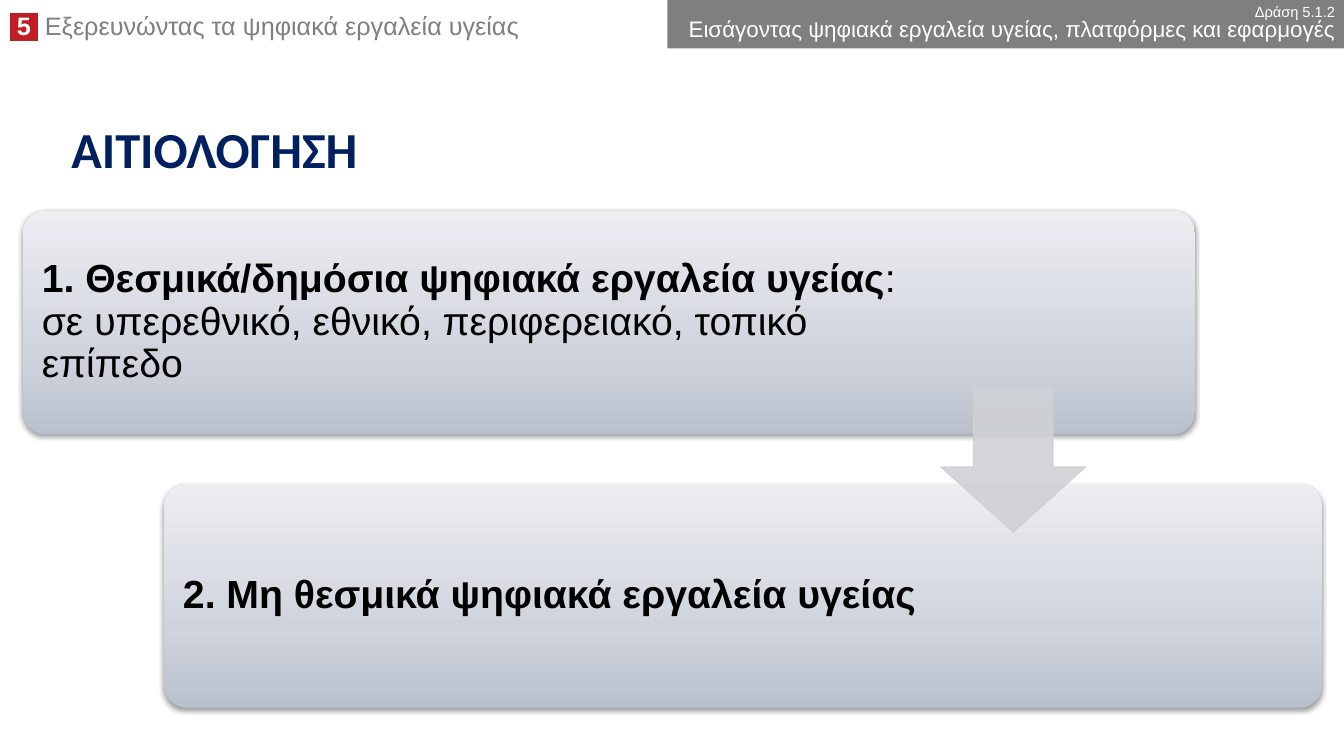
"""Builds the rationale slide: two cards of health tools joined by an arrow."""
from copy import deepcopy

from lxml import etree
from pptx import Presentation
from pptx.dml.color import RGBColor
from pptx.enum.shapes import MSO_SHAPE
from pptx.enum.text import MSO_ANCHOR, PP_ALIGN
from pptx.oxml.ns import qn
from pptx.util import Inches, Pt

RECT, ROUND, DOWN = MSO_SHAPE.RECTANGLE, MSO_SHAPE.ROUNDED_RECTANGLE, MSO_SHAPE.DOWN_ARROW
TOP, MIDDLE = MSO_ANCHOR.TOP, MSO_ANCHOR.MIDDLE
LEFT, RIGHT = PP_ALIGN.LEFT, PP_ALIGN.RIGHT

COLORS = {"white": "FFFFFF", "black": "000000", "gray": "7F7F7F", "red": "C01E24",
          "navy": "002060", "arrow": "CFD1D4"}
GRADE = [(0, "BAC1CE"), (35, "CFD3DC"), (100, "EDEEF2")]

# Each run: text, size, colour, bold
HEAD = [(" 5 ", 18, "white", True),
        (" Εξερευνώντας τα ψηφιακά εργαλεία υγείας", 18, "gray", False)]
BANNER = [("Δράση 5.1.2", 10.5, "white", False),
          ("Εισάγοντας ψηφιακά εργαλεία υγείας, πλατφόρμες και εφαρμογές", 16, "white", False)]
TITLE = [("ΑΙΤΙΟΛΟΓΗΣΗ", 36, "navy", True)]
CARDS = [
    ((0.23, 2.09, 11.62, 2.22), 9.1,
     [("1. Θεσμικά/δημόσια ψηφιακά εργαλεία υγείας", 28, "black", True),
      (": σε υπερεθνικό, εθνικό, περιφερειακό, τοπικό επίπεδο", 28, "black", False)]),
    ((1.63, 4.8, 11.48, 2.22), 7.75,
     [("2. Μη θεσμικά ψηφιακά εργαλεία υγείας", 28, "black", True)]),
]
ARROW = (9.33, 3.84, 1.44, 1.44)
PAD = 0.065


def rgb(name):
    return RGBColor.from_string(COLORS[name])


def node(parent, tag, **attrs):
    return etree.SubElement(parent, qn("a:" + tag), {k: str(v) for k, v in attrs.items()})


def tint(parent, color, alpha=100):
    part = node(parent, "srgbClr", val=color)
    if alpha < 100:
        node(part, "alpha", val=alpha * 1000)


def add_shape(slide, kind, box):
    shape = slide.shapes.add_shape(kind, *map(Inches, box))
    shape.shadow.inherit = False
    shape.line.fill.background()
    return shape


def write(shape, runs, anchor=MIDDLE, align=LEFT, space=0.9, inset=(0.1, 0.05),
          font="Arial", split=False):
    frame = shape.text_frame
    frame.word_wrap = True
    frame.vertical_anchor = anchor
    frame.margin_left = frame.margin_right = Inches(inset[0])
    frame.margin_top = frame.margin_bottom = Inches(inset[1])
    para = frame.paragraphs[0]
    para.alignment, para.line_spacing = align, space
    for i, (text, size, color, bold) in enumerate(runs):
        if split and i:
            para.add_line_break()
            para._p[-1].append(deepcopy(para.runs[-1].font._element))
        run = para.add_run()
        run.text = text
        run.font.size, run.font.bold, run.font.name = Pt(size), bold, font
        run.font.color.rgb = rgb(color)


def add_text(slide, box, runs, **style):
    shape = slide.shapes.add_textbox(*map(Inches, box))
    write(shape, runs, **style)
    return shape


def add_card(slide, box, width, runs):
    card = add_shape(slide, ROUND, box)
    card.adjustments[0] = 0.1
    card.fill.gradient()
    grad = card._element.spPr.find(qn("a:gradFill"))
    for child in list(grad):
        grad.remove(child)
    stops = node(grad, "gsLst")
    for pos, color in GRADE:
        tint(node(stops, "gs", pos=pos * 1000), color)
    node(grad, "lin", ang=270 * 60000, scaled=0)
    effect = card._element.spPr.find(qn("a:effectLst"))
    shade = node(effect, "outerShdw", blurRad=Pt(3.1), dist=Pt(1.6),
                 dir=90 * 60000, rotWithShape=0)
    tint(shade, COLORS["black"], 38)
    x, y, _, h = box
    add_text(slide, (x + PAD, y + PAD, width, h - 2 * PAD), runs, inset=(0.12, 0.12))


def add_arrow(slide):
    arrow = add_shape(slide, DOWN, ARROW)
    arrow.adjustments[0], arrow.adjustments[1] = 0.45, 0.55
    arrow.adjustments[0], arrow.adjustments[1] = 0.55, 0.45
    arrow.line.width = Pt(0.75)
    for fill in (arrow.fill, arrow.line.fill):
        fill.solid()
        fill.fore_color.rgb = rgb("arrow")
    for color in arrow._element.spPr.iter(qn("a:srgbClr")):
        node(color, "alpha", val=90000)


def main():
    deck = Presentation()
    deck.slide_width, deck.slide_height = Inches(13.33), Inches(7.5)
    slide = deck.slides.add_slide(deck.slide_layouts[6])
    head = add_text(slide, (0, 0.11, 9.52, 0.35), HEAD, anchor=TOP, space=0.8)
    props = head.text_frame.paragraphs[0].runs[0].font._element
    mark = node(props, "highlight")
    tint(mark, COLORS["red"])
    props.find(qn("a:solidFill")).addnext(mark)
    banner = add_shape(slide, RECT, (6.62, 0, 6.72, 0.48))
    banner.fill.solid()
    banner.fill.fore_color.rgb = rgb("gray")
    write(banner, BANNER, align=RIGHT, space=0.8, split=True)
    add_text(slide, (0.61, 1.18, 12.1, 0.66), TITLE, font="Calibri")
    for card in CARDS:
        add_card(slide, *card)
    add_arrow(slide)
    deck.save("out.pptx")


if __name__ == "__main__":
    main()
